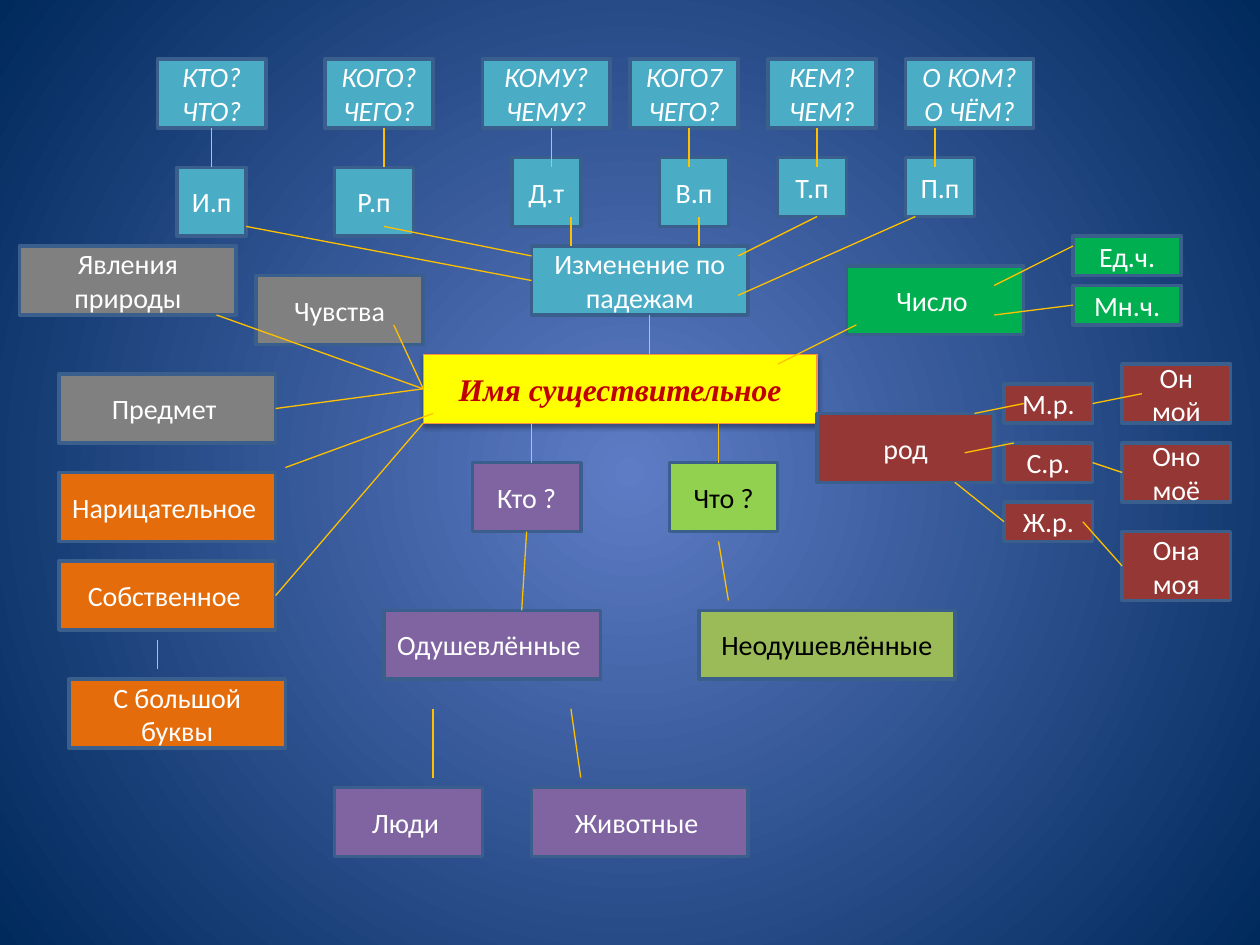
"""Build a mind map of the Russian noun and its grammatical features."""
from lxml import etree
from pptx import Presentation
from pptx import util as u
from pptx.dml.color import RGBColor
from pptx.enum import shapes, text
from pptx.oxml import parse_xml
from pptx.oxml.ns import nsdecls, qn

WHITE, BLACK = RGBColor(255, 255, 255), RGBColor(0, 0, 0)
YELLOW, DARK_RED = RGBColor(0xFF, 0xFF, 0x00), RGBColor(0xC0, 0x00, 0x00)
ORANGE_EDGE, GOLD = RGBColor(0xF6, 0x92, 0x40), RGBColor(0xFF, 0xC0, 0x00)
BOX_EDGE = RGBColor(0x3A, 0x5F, 0x8C)
TEAL, PURPLE = RGBColor(0x4B, 0xAC, 0xC6), RGBColor(0x80, 0x64, 0xA2)
LIME, OLIVE = RGBColor(0x92, 0xD0, 0x50), RGBColor(0x9B, 0xBB, 0x59)
GREEN, BROWN = RGBColor(0x00, 0xB0, 0x50), RGBColor(0x95, 0x37, 0x35)
GREY, ORANGE = RGBColor(0x80, 0x80, 0x80), RGBColor(0xE4, 0x6C, 0x0A)
GLOW, NAVY = RGBColor(0x5E, 0x7C, 0xC5), RGBColor(0x00, 0x29, 0x5C)

COLUMNS = 128
WIDTH, HEIGHT = 25.4, 19.05

TOPIC = ("Имя существительное", 43, 36, 40, 7)
QUESTIONS = [
    ("КТО?\nЧТО?", 16, 11), ("КОГО?\nЧЕГО?", 33, 11), ("КОМУ?\nЧЕМУ?", 49, 13),
    ("КОГО7\nЧЕГО?", 64, 11), ("КЕМ?\nЧЕМ?", 78, 11), ("О КОМ?\nО ЧЁМ?", 92, 13),
]
BRANCHES = [
    (TEAL, WHITE, [
        ("И.п", 18, 17, 7, 7), ("Р.п", 34, 17, 8, 7), ("Д.т", 52, 16, 7, 7),
        ("В.п", 67, 16, 7, 7), ("Т.п", 79, 16, 7, 6), ("П.п", 92, 16, 7, 6),
        ("Изменение по падежам", 54, 25, 22, 7),
    ]),
    (GREEN, WHITE, [
        ("Мн.ч.", 109, 29, 11, 4), ("Ед.ч.", 109, 24, 11, 4), ("Число ", 86, 27, 18, 7),
    ]),
    (BROWN, WHITE, [
        ("род", 83, 42, 18, 7),
        ("М.р.", 102, 39, 9, 4), ("С.р.", 102, 45, 9, 4), ("Ж.р.", 102, 51, 9, 4),
        ("Он\nмой", 114, 37, 11, 6), ("Оно\nмоё", 114, 45, 11, 6),
        ("Она\nмоя", 114, 54, 11, 7),
    ]),
    (GREY, WHITE, [
        ("Чувства", 26, 28, 17, 7), ("Предмет ", 6, 38, 22, 7),
        ("Явления природы", 2, 25, 22, 7),
    ]),
    (ORANGE, WHITE, [
        ("Нарицательное ", 6, 48, 22, 7), ("Собственное ", 6, 57, 22, 7),
        ("С большой буквы", 7, 69, 22, 7),
    ]),
    (PURPLE, WHITE, [
        ("Кто ?", 48, 47, 11, 7), ("Одушевлённые ", 39, 62, 22, 7),
        ("Люди ", 34, 80, 15, 7), ("Животные ", 54, 80, 22, 7),
    ]),
    (LIME, BLACK, [("Что ?", 68, 47, 11, 7)]),
    (OLIVE, BLACK, [("Неодушевлённые", 71, 62, 26, 7)]),
]
QUESTION_LINKS = [(x, 13, x, 17) for x in (21.5, 39, 56, 70, 83, 95)]
CASE_LINKS = [
    (75, 30, 93, 22), (66, 32, 66, 36), (75, 26, 83, 22), (71, 25, 71, 22),
    (54, 26, 39, 23), (58, 25, 58, 22), (54, 28.5, 25, 23),
]
NUMBER_LINKS = [(79, 37, 87, 33), (101, 29, 109, 25), (101, 32, 109, 31)]
GENDER_LINKS = [
    (99, 42, 104, 41), (98, 46, 103, 45), (97, 49, 102, 53),
    (111, 41, 116, 40), (111, 47, 114, 48), (110, 53, 114, 57.5),
]
ANIMACY_LINKS = [
    (54, 43, 54, 47), (73, 43, 73, 47), (53.5, 54, 53, 62),
    (73, 55, 74, 61), (58, 72, 59, 79), (44, 72, 44, 79),
]
MEANING_LINKS = [
    (43, 39.5, 22, 32), (43, 39.5, 40, 33), (43, 39.5, 28, 41.5),
    (44, 42, 29, 47.5), (43, 43, 28, 60.5), (16, 68, 16, 65),
]
LINKS = (QUESTION_LINKS + CASE_LINKS + NUMBER_LINKS + GENDER_LINKS
         + ANIMACY_LINKS + MEANING_LINKS)


def grid(*steps):
    return [u.Cm(step * WIDTH / COLUMNS) for step in steps]


def paint_background(slide):
    fill = slide.background.fill
    fill.gradient()
    for stop, color, position in zip(fill.gradient_stops, (GLOW, NAVY), (0, 1)):
        stop.color.rgb = color
        stop.position = position
    direction = next(slide.element.iter(qn("a:lin")))
    direction.getparent().replace(direction, parse_xml(
        f'<a:path {nsdecls("a")} path="circle">'
        '<a:fillToRect l="50000" t="50000" r="50000" b="50000"/></a:path>'))


def add_box(slide, label, x, y, w, h, fill, color, italic=False, bold=False,
            edge=BOX_EDGE, edge_width=2, font="Calibri", size=16):
    box = slide.shapes.add_shape(shapes.MSO_SHAPE.RECTANGLE, *grid(x, y, w, h))
    box.shadow.inherit = False
    box.fill.solid()
    box.fill.fore_color.rgb = fill
    box.line.color.rgb = edge
    box.line.width = u.Pt(edge_width)
    frame = box.text_frame
    frame.text = label
    frame.word_wrap = True
    frame.vertical_anchor = text.MSO_ANCHOR.MIDDLE
    for paragraph in frame.paragraphs:
        paragraph.alignment = text.PP_ALIGN.CENTER
        for run in paragraph.runs:
            run.font.name = font
            run.font.size = u.Pt(size)
            run.font.color.rgb = color
            run.font.italic = italic
            run.font.bold = bold
    return box


def add_topic(slide):
    topic = add_box(slide, *TOPIC, YELLOW, DARK_RED, italic=True, bold=True,
                    edge=ORANGE_EDGE, edge_width=0.75, font="Times New Roman", size=18)
    effects = topic.element.spPr.find(qn("a:effectLst"))
    effects.append(parse_xml(
        f'<a:outerShdw {nsdecls("a")} blurRad="40000" dist="23000" dir="5400000" '
        'rotWithShape="0"><a:srgbClr val="000000"><a:alpha val="35000"/>'
        '</a:srgbClr></a:outerShdw>'))


def add_link(slide, ends):
    link = slide.shapes.add_connector(shapes.MSO_CONNECTOR.STRAIGHT, *grid(*ends))
    link.line.color.rgb = GOLD
    link.line.width = u.Pt(0.75)
    etree.SubElement(link.element.spPr, qn("a:effectLst"))


def main():
    deck = Presentation()
    deck.slide_width, deck.slide_height = u.Cm(WIDTH), u.Cm(HEIGHT)
    slide = deck.slides.add_slide(deck.slide_layouts[6])
    paint_background(slide)
    add_topic(slide)
    for question, x, width in QUESTIONS:
        add_box(slide, question, x, 6, width, 7, TEAL, WHITE, italic=True)
    for fill, color, notions in BRANCHES:
        for notion in notions:
            add_box(slide, *notion, fill, color)
    for ends in LINKS:
        add_link(slide, ends)
    deck.save("out.pptx")


if __name__ == "__main__":
    main()
